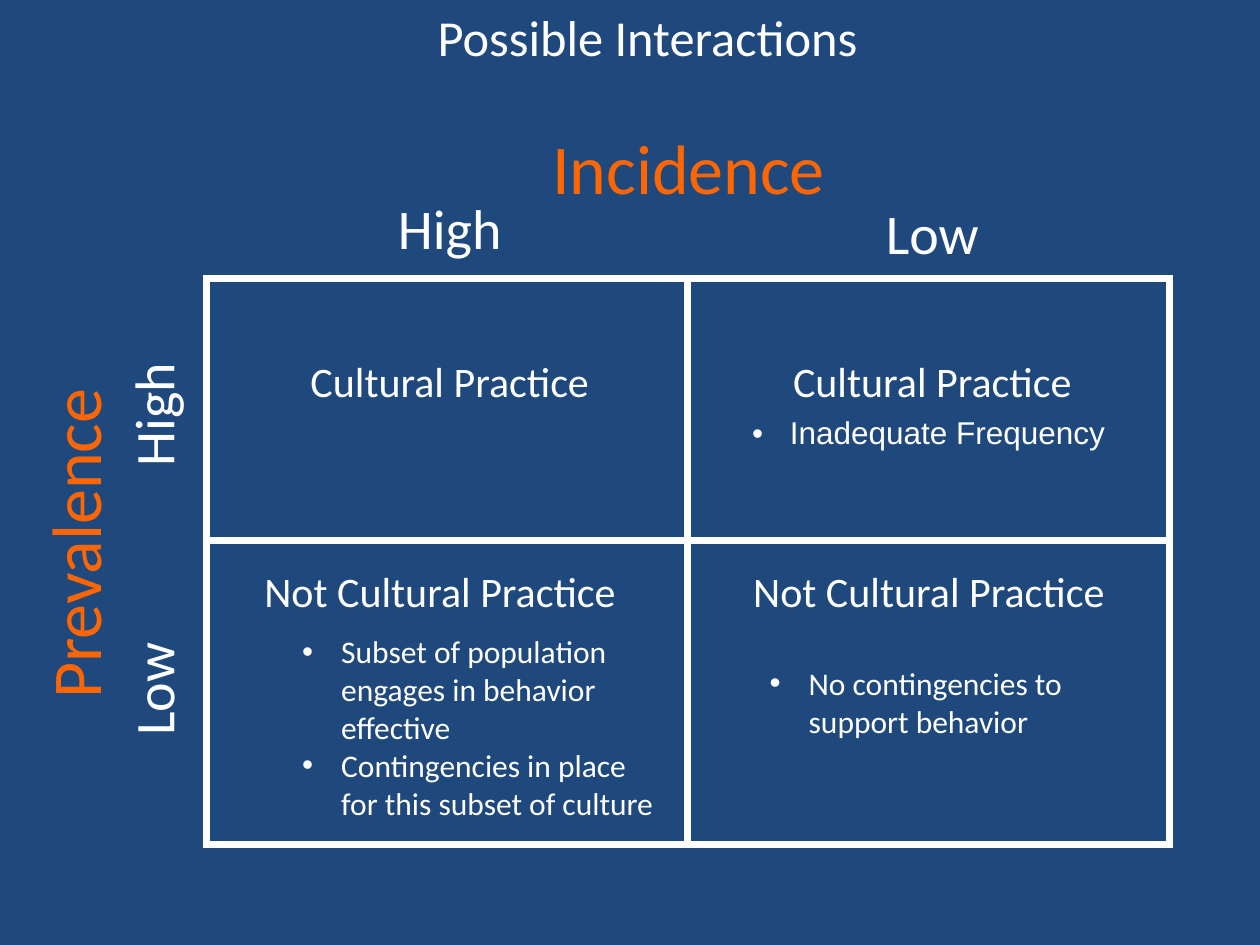
import pptx
import pptx.util
import pptx.dml.color
import pptx.enum.text
import pptx.oxml
import pptx.oxml.ns
import lxml.etree

Inches = pptx.util.Inches
Pt = pptx.util.Pt
ALIGN = pptx.enum.text.PP_ALIGN
ANCHOR = pptx.enum.text.MSO_ANCHOR
HUES = {"back": "1F497D", "text": "FFFFFF", "axis": "FF6600"}


def tint(hue):
    return pptx.dml.color.RGBColor.from_string(HUES[hue])


def add_tag(parent, tag, **attrs):
    return lxml.etree.SubElement(parent, pptx.oxml.ns.qn(tag), attrs)


class Deck:
    """Holds the style and the current slide."""

    def __init__(self):
        self.file = pptx.Presentation()
        self.file.slide_width = Inches(10)
        self.file.slide_height = Inches(7.5)
        self.slide = self.file.slides.add_slide(self.file.slide_layouts[6])
        fill = self.slide.background.fill
        fill.solid()
        fill.fore_color.rgb = tint("back")

    def words(self, para, text, size, hue="text", face="Calibri", align=ALIGN.CENTER):
        para.alignment = align
        run = para.add_run()
        run.text = text
        for name, value in {"size": Pt(size), "name": face}.items():
            setattr(run.font, name, value)
        run.font.color.rgb = tint(hue)

    def bullet(self, para, left, hang):
        props = para._p.get_or_add_pPr()
        props.set("marL", str(Inches(left)))
        props.set("indent", str(-Inches(hang)))
        add_tag(add_tag(props, "a:buClr"), "a:srgbClr", val=HUES["text"])
        add_tag(props, "a:buFont", typeface="Arial")
        add_tag(props, "a:buChar", char="•")

    def box(self, place, turn=0, anchor=ANCHOR.TOP):
        shape = self.slide.shapes.add_textbox(*map(Inches, place))
        shape.rotation = turn
        frame = shape.text_frame
        for name, value in {"word_wrap": True, "vertical_anchor": anchor}.items():
            setattr(frame, name, value)
        return frame

    def label(self, place, text, size, turn=0, anchor=ANCHOR.TOP, **style):
        frame = self.box(place, turn, anchor)
        self.words(frame.paragraphs[0], text, size, **style)

    def points(self, place, items):
        frame = self.box(place)
        for i, text in enumerate(items):
            para = frame.add_paragraph() if i else frame.paragraphs[0]
            self.bullet(para, 0.81, 0.31)
            self.words(para, text, 18, align=ALIGN.LEFT)

    def border(self, cell, width):
        props = cell._tc.get_or_add_tcPr()
        for i, side in enumerate(("a:lnL", "a:lnR", "a:lnT", "a:lnB")):
            line = pptx.oxml.parse_xml(
                f'<{side} {pptx.oxml.ns.nsdecls("a")} w="{Pt(width)}"><a:solidFill>'
                f'<a:srgbClr val="{HUES["text"]}"/></a:solidFill></{side}>')
            props.insert(i, line)

    def grid(self, left, top, cols, rows):
        frame = self.slide.shapes.add_table(
            len(rows), len(cols), Inches(left), Inches(top),
            Inches(sum(cols)), Inches(sum(rows)))
        table = frame.table
        table.first_row = table.horz_banding = False
        for col, width in zip(table.columns, cols):
            col.width = Inches(width)
        for row, height in zip(table.rows, rows):
            row.height = Inches(height)
        for cell in table.iter_cells():
            cell.fill.background()
            self.border(cell, 4.5)
        return table


def main():
    deck = Deck()

    # Title
    deck.label((0.64, 0, 9, 0.57), "Possible Interactions", 28.8, anchor=ANCHOR.MIDDLE)

    # Two by two grid, with a note in the top right cell
    table = deck.grid(1.64, 2.21, [3.82, 3.82], [2.08, 2.41])
    cell = table.cell(0, 1)
    cell.vertical_anchor = ANCHOR.MIDDLE
    cell.margin_top = Inches(0.43)
    note = cell.text_frame.paragraphs[0]
    deck.bullet(note, 0.3, 0.3)
    deck.words(note, "Inadequate Frequency", 18, face="Arial")

    # Levels along both axes
    for left, top, text, turn in (
        (0.47, 2.97, "High", 270),
        (0.47, 5.15, "Low", 270),
        (6.66, 1.53, "Low", 0),
        (2.83, 1.49, "High", 0),
    ):
        deck.label((left, top, 1.48, 0.64), text, 32, turn)

    # Cell headings
    for left, top, width, text, align in (
        (5.75, 2.77, 3.3, "Cultural Practice", ALIGN.CENTER),
        (2.25, 2.77, 2.64, "Cultural Practice", ALIGN.CENTER),
        (2, 4.44, 3.14, "Not Cultural Practice", ALIGN.LEFT),
        (5.88, 4.44, 3.03, "Not Cultural Practice", ALIGN.LEFT),
    ):
        deck.label((left, top, width, 0.51), text, 24, align=align)

    # Reasons in the lower cells
    deck.points((1.8, 4.97, 3.55, 1.62), [
        "Subset of population engages in behavior effective",
        "Contingencies in place for this subset of culture",
    ])
    deck.points((5.51, 5.22, 3.78, 0.71), ["No contingencies to support behavior"])

    # Axis names
    deck.label((3.97, 0.94, 2.99, 0.77), "Incidence", 40, hue="axis")
    deck.label((-0.91, 3.93, 2.99, 0.77), "Prevalence", 40, 270, hue="axis")

    deck.file.save("out.pptx")


if __name__ == "__main__":
    main()
